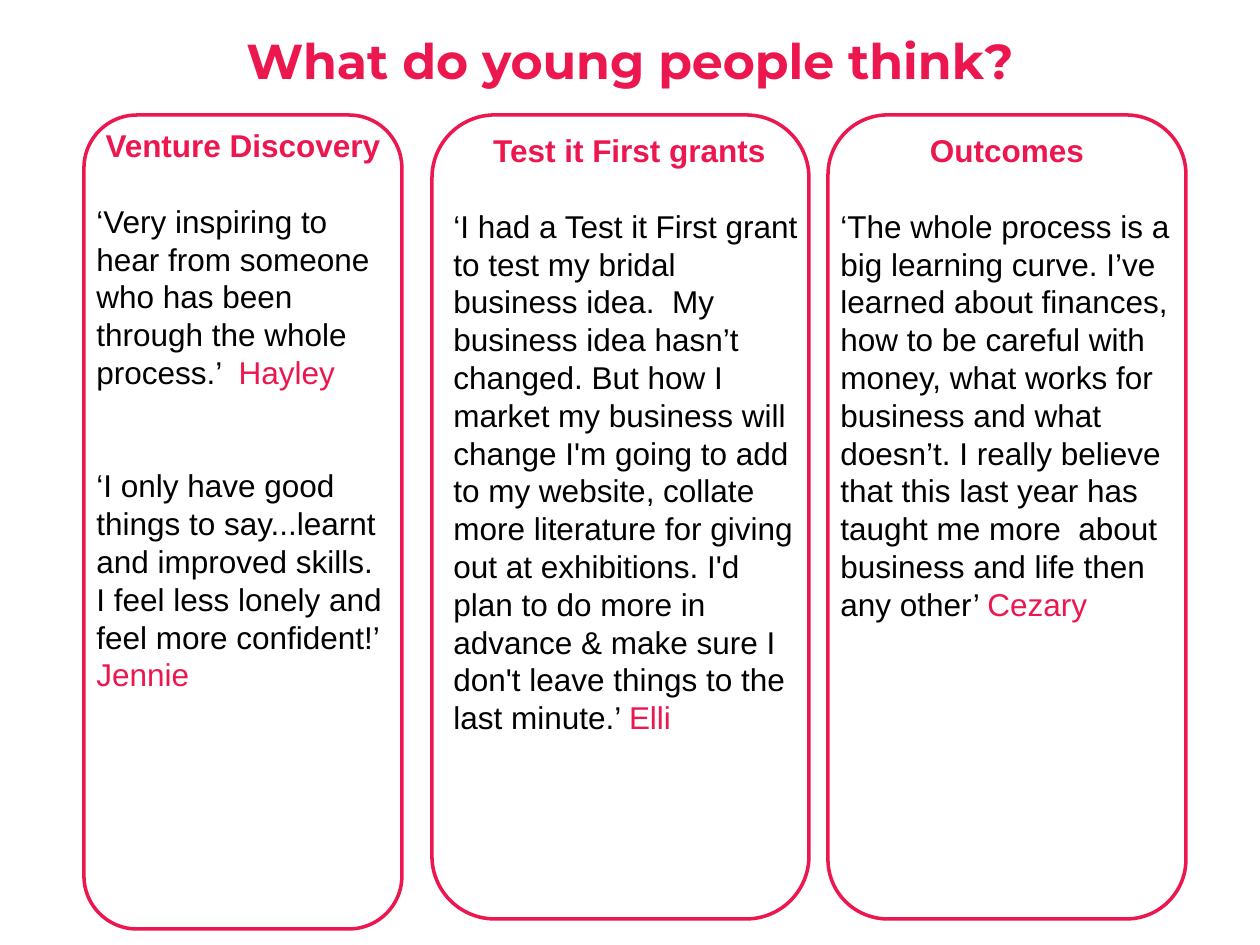
"""Build a slide of young people's quotes in three rounded columns."""
from pptx import Presentation
from pptx.dml.color import RGBColor
from pptx.enum.shapes import MSO_SHAPE
from pptx.enum.text import MSO_ANCHOR, PP_ALIGN
from pptx.util import Emu, Pt

PINK = RGBColor(0xED, 0x17, 0x4F)
BLACK = RGBColor(0, 0, 0)
LINE_PITCH = 21.6
PANEL_TOP = 115

TITLE = "What do young people think?"
COLUMNS = [
    {
        "heading": "Venture Discovery",
        "panel": (84, 318, 814),
        "text": (84, 120, 699),
        "quotes": [
            ("‘Very inspiring to hear from someone who has been through the whole process.’  ", "Hayley"),
            ("‘I only have good things to say...learnt and improved skills.  I feel less lonely "
             "and feel more confident!’ ", "Jennie"),
        ],
    },
    {
        "heading": "Test it First grants",
        "panel": (432, 377, 804),
        "text": (441, 125, 624),
        "quotes": [
            ("‘I had a Test it First grant to test my bridal business idea.  My business idea "
             "hasn’t changed. But how I market my business will change I'm going to add to my "
             "website, collate more literature for giving out at exhibitions. I'd plan to do more "
             "in advance & make sure I don't leave things to the last minute.’ ", "Elli"),
        ],
    },
    {
        "heading": "Outcomes",
        "panel": (828, 358, 804),
        "text": (828, 125, 585),
        "quotes": [
            ("‘The whole process is a big learning curve. I’ve learned about finances, how to be "
             "careful with money, what works for business and what doesn’t. I really believe that "
             "this last year has taught me more  about business and life then any other’ ", "Cezary"),
        ],
    },
]


def px(value):
    return Emu(round(value * 914400 / 126))


def set_font(font, name, size, color, bold=False):
    font.name = name
    font.size = Pt(size)
    font.bold = bold
    font.color.rgb = color


def add_title(page):
    title = page.shapes.title
    title.left, title.top, title.width, title.height = map(px, (63, 26, 1134, 68))
    title.text_frame.vertical_anchor = MSO_ANCHOR.MIDDLE
    para = title.text_frame.paragraphs[0]
    para.text = TITLE
    para.alignment = PP_ALIGN.CENTER
    set_font(para.font, "Montserrat", 28, PINK, True)


def add_panel(page, left, width, height):
    panel = page.shapes.add_shape(
        MSO_SHAPE.ROUNDED_RECTANGLE, px(left), px(PANEL_TOP), px(width), px(height))
    panel.shadow.inherit = False
    panel.fill.background()
    panel.line.color.rgb = PINK
    panel.line.width = Pt(2)


def add_quotes(page, column):
    left, top, height = column["text"]
    width = column["panel"][1]
    box = page.shapes.add_textbox(px(left), px(top), px(width), px(height))
    frame = box.text_frame
    frame.word_wrap = True
    heading = frame.paragraphs[0]
    heading.text = column["heading"]
    heading.alignment = PP_ALIGN.CENTER
    heading.line_spacing = Pt(LINE_PITCH)
    set_font(heading.font, "Arial", 18, PINK, True)
    for blank_lines, (quote, speaker) in enumerate(column["quotes"], start=1):
        para = frame.add_paragraph()
        para.line_spacing = Pt(LINE_PITCH)
        para.space_before = Pt(LINE_PITCH * blank_lines)
        set_font(para.font, "Arial", 18, BLACK)
        para.add_run().text = quote
        name = para.add_run()
        name.text = speaker
        name.font.color.rgb = PINK


def main():
    deck = Presentation()
    deck.slide_width, deck.slide_height = px(1260), px(945)
    page = deck.slides.add_slide(deck.slide_layouts[5])
    add_title(page)
    for column in COLUMNS:
        add_panel(page, *column["panel"])
        add_quotes(page, column)
    deck.save("out.pptx")


if __name__ == "__main__":
    main()
